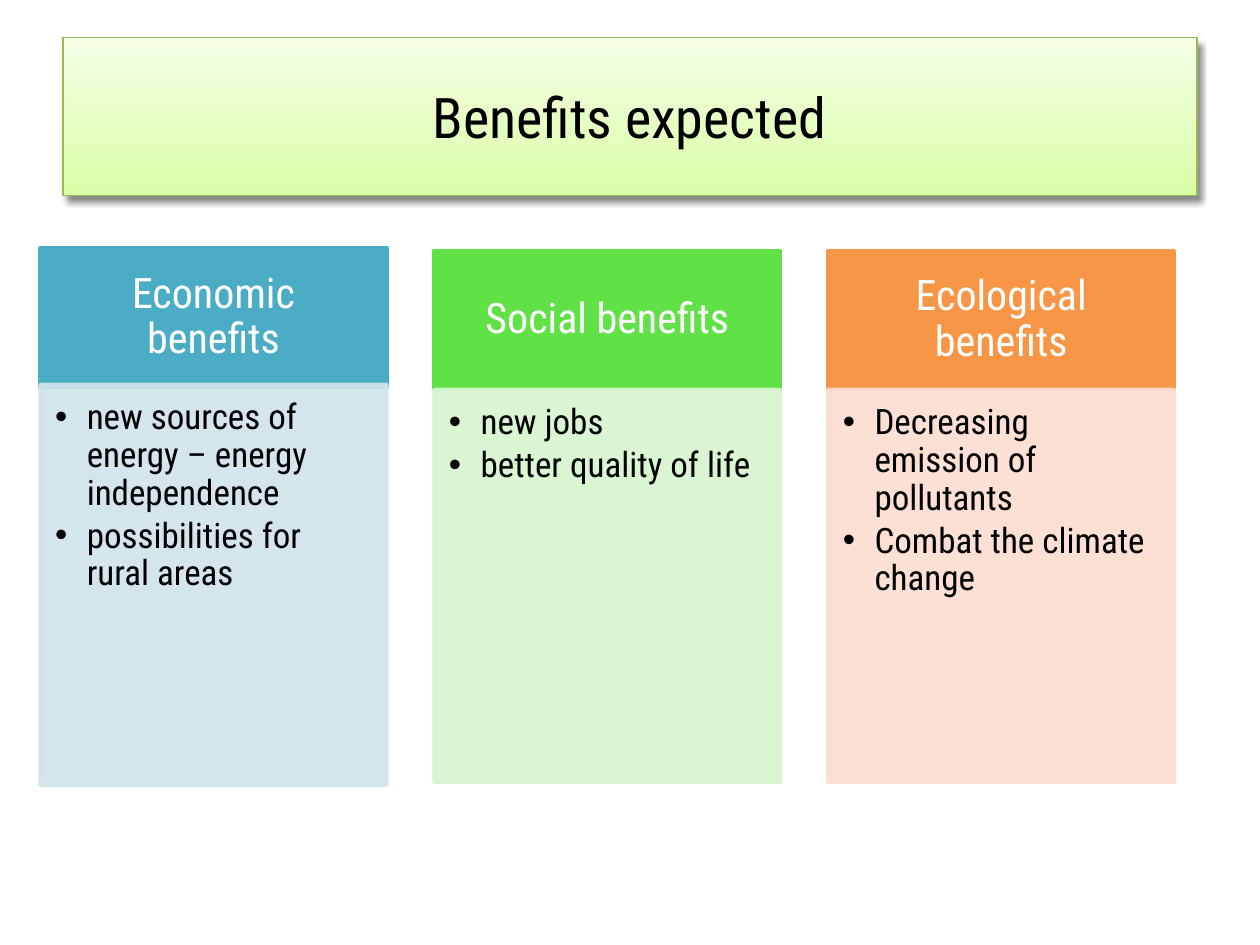
"""Build a slide with a title banner and three columns of expected benefits."""
from lxml import etree
from pptx import Presentation
from pptx.dml.color import RGBColor
from pptx.enum.shapes import MSO_SHAPE
from pptx.enum.text import MSO_ANCHOR, PP_ALIGN
from pptx.oxml import parse_xml
from pptx.oxml.ns import nsdecls, qn
from pptx.util import Cm, Pt

RECTANGLE = MSO_SHAPE.RECTANGLE
TOP, MIDDLE = MSO_ANCHOR.TOP, MSO_ANCHOR.MIDDLE
LEFT, CENTER = PP_ALIGN.LEFT, PP_ALIGN.CENTER
FONT = "Roboto Condensed"

BLACK = RGBColor(0x00, 0x00, 0x00)
WHITE = RGBColor(0xFF, 0xFF, 0xFF)
BANNER_TOP = RGBColor(0xF5, 0xFF, 0xE6)
BANNER_BOTTOM = RGBColor(0xDA, 0xFD, 0xA7)
BANNER_LINE = RGBColor(0x98, 0xB9, 0x54)
BLUE = RGBColor(0x4B, 0xAC, 0xC6)
PALE_BLUE = RGBColor(0xD0, 0xE3, 0xEA)
GREEN = RGBColor(0x60, 0xE1, 0x46)
PALE_GREEN = RGBColor(0xD6, 0xF4, 0xCE)
ORANGE = RGBColor(0xF7, 0x96, 0x46)
PALE_ORANGE = RGBColor(0xFC, 0xDD, 0xCF)

COLUMNS = [
    ("Economic benefits", BLUE, PALE_BLUE, 5.0, 7.75, 8.08,
     ["new sources of energy – energy independence", "possibilities for rural areas"]),
    ("Social benefits", GREEN, PALE_GREEN, 5.05, 7.85, 7.92,
     ["new jobs", "better quality of life"]),
    ("Ecological benefits", ORANGE, PALE_ORANGE, 5.05, 7.85, 7.92,
     ["Decreasing emission of pollutants", "Combat the climate change"]),
]
COLUMN_LEFT, COLUMN_STEP, COLUMN_WIDTH, HEADER_HEIGHT = 0.81, 7.94, 6.99, 2.8


def write(box, lines, size, color, align=CENTER, anchor=MIDDLE, insets=(0.25, 0.13, 0.25, 0.13),
          spacing=1.0, after=0, bullet=False):
    frame = box.text_frame
    frame.word_wrap = True
    frame.vertical_anchor = anchor
    frame.margin_left, frame.margin_top, frame.margin_right, frame.margin_bottom = map(Cm, insets)
    for index, line in enumerate(lines):
        para = frame.paragraphs[0] if index == 0 else frame.add_paragraph()
        if bullet:
            properties = para._p.get_or_add_pPr()
            properties.set("marL", str(Cm(0.64)))
            properties.set("indent", str(Cm(-0.64)))
            etree.SubElement(properties, qn("a:buFont")).set("typeface", "Arial")
            etree.SubElement(properties, qn("a:buChar")).set("char", "•")
        para.alignment = align
        para.line_spacing = spacing
        para.space_after = Pt(after)
        span = para.add_run()
        span.text = line
        span.font.name = FONT
        span.font.size = Pt(size)
        span.font.color.rgb = color


def add_block(page, left, top, height, color, opacity=100):
    box = page.shapes.add_shape(RECTANGLE, Cm(left), Cm(top), Cm(COLUMN_WIDTH), Cm(height))
    box.shadow.inherit = False
    box.fill.solid()
    box.fill.fore_color.rgb = color
    box.line.color.rgb = color
    box.line.width = Pt(2)
    if opacity < 100:
        for paint in box._element.spPr.iter(qn("a:srgbClr")):
            etree.SubElement(paint, qn("a:alpha")).set("val", str(opacity * 1000))
    return box


deck = Presentation()
deck.slide_width, deck.slide_height = Cm(25.4), Cm(19.05)
page = deck.slides.add_slide(deck.slide_layouts[6])

for number, (heading, color, pale, top, body_top, body_height, points) in enumerate(COLUMNS):
    left = COLUMN_LEFT + number * COLUMN_STEP
    header = add_block(page, left, top, HEADER_HEIGHT, color)
    write(header, [heading], 24, WHITE, insets=(0.48, 0.28, 0.48, 0.28), spacing=0.9, after=8.4)
    body = add_block(page, left, body_top, body_height, pale, opacity=90)
    write(body, points, 20, BLACK, align=LEFT, anchor=TOP, insets=(0.3, 0.3, 0.41, 0.43),
          spacing=0.9, after=3, bullet=True)

banner = page.shapes.add_shape(RECTANGLE, Cm(1.27), Cm(0.76), Cm(22.86), Cm(3.18))
banner.shadow.inherit = False
banner.fill.gradient()
banner.fill.gradient_angle = 270
for stop, color in zip(banner.fill.gradient_stops, (BANNER_TOP, BANNER_BOTTOM)):
    stop.color.rgb = color
banner.line.color.rgb = BANNER_LINE
banner.line.width = Pt(0.75)
banner._element.spPr.find(qn("a:effectLst")).append(parse_xml(
    f'<a:outerShdw {nsdecls("a")} blurRad="40000" dist="50000" dir="3600000" rotWithShape="0">'
    '<a:srgbClr val="000000"><a:alpha val="45000"/></a:srgbClr></a:outerShdw>'))
write(banner, ["Benefits expected"], 32, BLACK)

deck.save("out.pptx")
